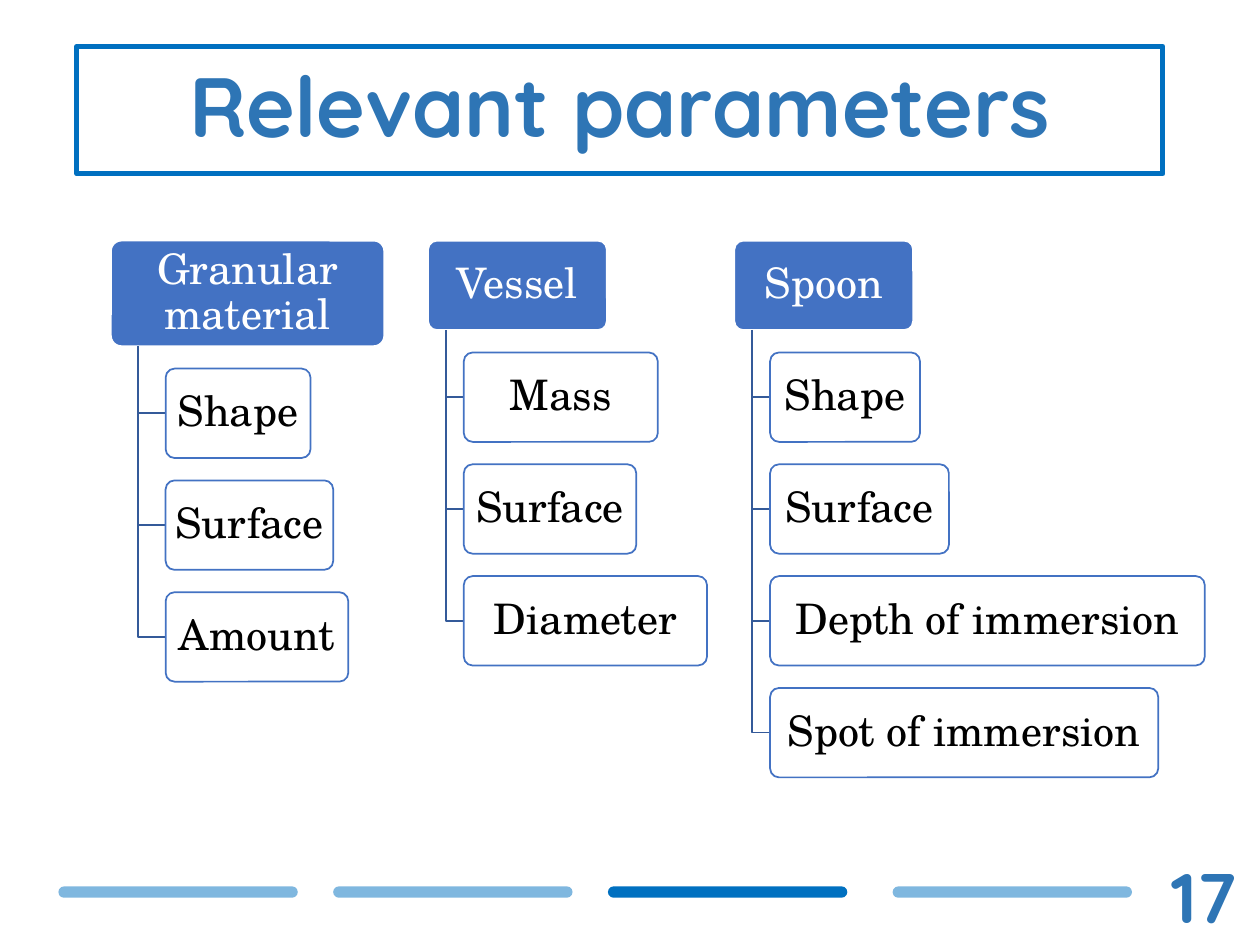
from dataclasses import dataclass

import lxml.etree
import pptx
import pptx.dml.color
import pptx.enum.shapes
import pptx.enum.text
import pptx.oxml.ns
import pptx.util

Pt = pptx.util.Pt
RGBColor = pptx.dml.color.RGBColor
ShapeType = pptx.enum.shapes.MSO_SHAPE
Align = pptx.enum.text.PP_ALIGN
Anchor = pptx.enum.text.MSO_ANCHOR

WHITE = RGBColor(0xFF, 0xFF, 0xFF)
BLACK = RGBColor(0x00, 0x00, 0x00)
BAR_BLUE = RGBColor(0x00, 0x70, 0xC0)
TITLE_BLUE = RGBColor(0x2E, 0x75, 0xB5)
BOX_BLUE = RGBColor(0x43, 0x72, 0xC3)
STEM_BLUE = RGBColor(0x34, 0x5A, 0x99)

TITLE_FONT = "Quicksand"
BODY_FONT = "TeX Gyre Schola"

HEADING_TOP = 137.5
ITEM_HEIGHT = 51.1
ITEM_GAP = 12.8


@dataclass
class Box:
    left: float
    top: float
    width: float
    height: float


@dataclass
class Item:
    text: str
    width: float


@dataclass
class Branch:
    heading: str
    left: float
    width: float
    height: float
    items: list[Item]


BRANCHES = [
    Branch("Granular material", 63.4, 156.2, 60.3,
           [Item("Shape", 82.8), Item("Surface", 95.8), Item("Amount", 104.4)]),
    Branch("Vessel", 244.6, 102.2, 51.1,
           [Item("Mass", 110.9), Item("Surface", 98.6), Item("Diameter", 139)]),
    Branch("Spoon", 419.6, 102.2, 51.1,
           [Item("Shape", 85.7), Item("Surface", 102.2),
            Item("Depth of immersion", 248.4), Item("Spot of immersion", 221.8)]),
]


def set_opacity(shape, percent: int) -> None:
    color = shape.fill._xPr.find(".//" + pptx.oxml.ns.qn("a:srgbClr"))
    alpha = lxml.etree.SubElement(color, pptx.oxml.ns.qn("a:alpha"))
    alpha.set("val", str(percent * 1000))


def add_box(slide, kind, box: Box, fill: RGBColor | None, line: RGBColor | None,
            line_width: float = 1, rounding: float | None = None, opacity: int = 100):
    shape = slide.shapes.add_shape(
        kind, Pt(box.left), Pt(box.top), Pt(box.width), Pt(box.height))
    shape.shadow.inherit = False
    if rounding is not None:
        shape.adjustments[0] = rounding
    if fill is None:
        shape.fill.background()
    else:
        shape.fill.solid()
        shape.fill.fore_color.rgb = fill
    if opacity < 100:
        set_opacity(shape, opacity)
    if line is None:
        shape.line.fill.background()
    else:
        shape.line.color.rgb = line
        shape.line.width = Pt(line_width)
    return shape


def write(shape, text: str, font_name: str, size: float, color: RGBColor,
          inset: tuple[float, float], bold: bool = False, align=Align.CENTER,
          anchor=Anchor.MIDDLE, line_spacing: float = 0.9) -> None:
    frame = shape.text_frame
    frame.word_wrap = True
    frame.vertical_anchor = anchor
    frame.margin_left = frame.margin_right = Pt(inset[0])
    frame.margin_top = frame.margin_bottom = Pt(inset[1])
    paragraph = frame.paragraphs[0]
    paragraph.text = text
    paragraph.alignment = align
    paragraph.line_spacing = line_spacing
    paragraph.font.name = font_name
    paragraph.font.size = Pt(size)
    paragraph.font.bold = bold
    paragraph.font.color.rgb = color


def add_node(slide, text: str, box: Box, fill: RGBColor, line: RGBColor,
             color: RGBColor, opacity: int = 100) -> None:
    shape = add_box(slide, ShapeType.ROUNDED_RECTANGLE, box, fill, line,
                    rounding=0.1, opacity=opacity)
    write(shape, text, BODY_FONT, 24, color, inset=(3.5, 2))


def add_elbow(slide, stem: float, top: float, right: float, bottom: float) -> None:
    builder = slide.shapes.build_freeform(Pt(stem), Pt(top))
    builder.add_line_segments(
        [(Pt(stem), Pt(bottom)), (Pt(right), Pt(bottom))], close=False)
    elbow = builder.convert_to_shape()
    elbow.shadow.inherit = False
    elbow.fill.background()
    elbow.line.color.rgb = STEM_BLUE
    elbow.line.width = Pt(1)


def add_branch(slide, branch: Branch) -> None:
    add_node(slide, branch.heading,
             Box(branch.left, HEADING_TOP, branch.width, branch.height),
             BOX_BLUE, WHITE, WHITE)
    heading_bottom = HEADING_TOP + branch.height
    stem = branch.left + 0.1 * branch.width
    item_left = branch.left + 0.2 * branch.width
    for index, item in enumerate(branch.items):
        top = heading_bottom + ITEM_GAP + index * (ITEM_HEIGHT + ITEM_GAP)
        add_elbow(slide, stem, heading_bottom, item_left, top + ITEM_HEIGHT / 2)
        add_node(slide, item.text, Box(item_left, top, item.width, ITEM_HEIGHT),
                 WHITE, BOX_BLUE, BLACK, opacity=90)


def main() -> None:
    presentation = pptx.Presentation()
    presentation.slide_width = Pt(720)
    presentation.slide_height = Pt(540)
    slide = presentation.slides.add_slide(presentation.slide_layouts[6])

    # Progress bars, the third one being current
    for left, opacity in ((33.4, 50), (190.4, 50), (347.4, 100), (510.1, 50)):
        add_box(slide, ShapeType.ROUNDED_RECTANGLE, Box(left, 506.5, 136.8, 6.5),
                BAR_BLUE, None, rounding=0.5, opacity=opacity)

    # Title
    title = add_box(slide, ShapeType.RECTANGLE, Box(43.9, 26.6, 620.6, 72.7),
                    None, BAR_BLUE, line_width=3)
    write(title, "Relevant parameters", TITLE_FONT, 48, TITLE_BLUE,
          inset=(5.8, 2.9), bold=True)

    # Slide number
    number = slide.shapes.add_textbox(Pt(602.6), Pt(484.6), Pt(110.2), Pt(50.4))
    write(number, "17", TITLE_FONT, 40, TITLE_BLUE, inset=(5.8, 2.9), bold=True,
          align=Align.RIGHT, anchor=Anchor.TOP, line_spacing=1.0)

    # Parameter trees
    for branch in BRANCHES:
        add_branch(slide, branch)

    presentation.save("out.pptx")


if __name__ == "__main__":
    main()
